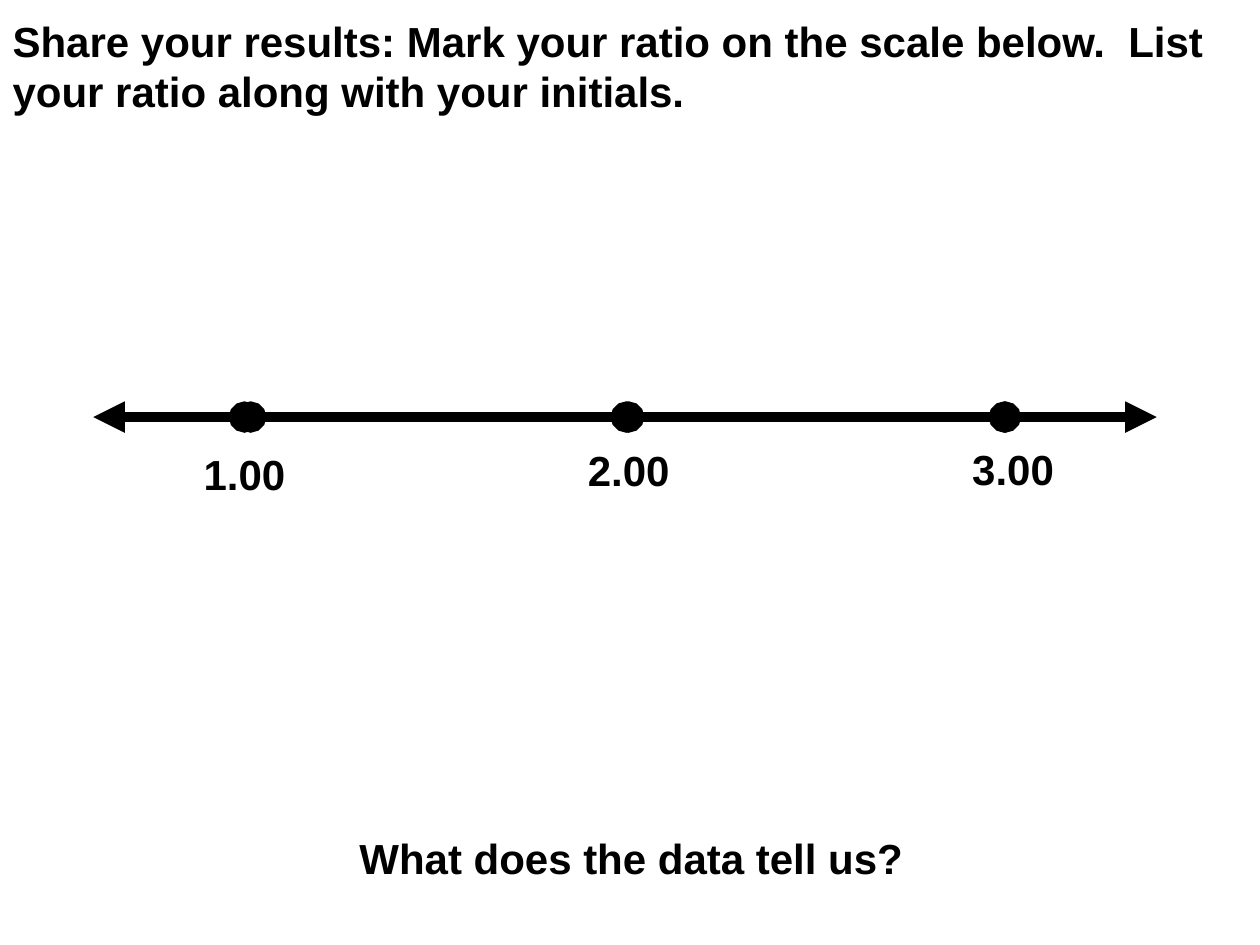
from dataclasses import dataclass

from lxml.etree import SubElement
from pptx import Presentation
from pptx.dml.color import RGBColor
from pptx.enum.shapes import MSO_CONNECTOR
from pptx.enum.text import MSO_ANCHOR, MSO_AUTO_SIZE, PP_ALIGN
from pptx.oxml.ns import qn
from pptx.util import Pt


@dataclass(frozen=True)
class Theme:
    ink: RGBColor = RGBColor(0, 0, 0)
    paper: RGBColor = RGBColor(255, 255, 255)
    font: str = "Arial"
    size: float = 24
    stroke: float = 6


THEME = Theme()


def write(shape, text, align):
    frame = shape.text_frame
    frame.word_wrap = True
    frame.auto_size = MSO_AUTO_SIZE.NONE
    frame.vertical_anchor = MSO_ANCHOR.TOP
    frame.text = text
    para = frame.paragraphs[0]
    para.alignment = align
    para.space_before = Pt(THEME.size / 2)
    font = para.font
    font.name, font.size, font.bold = THEME.font, Pt(THEME.size), True
    font.color.rgb = THEME.ink


def add_title(slide, box, text):
    title = slide.shapes.title
    title.left, title.top, title.width, title.height = map(Pt, box)
    write(title, text, PP_ALIGN.LEFT)


def add_label(slide, box, text):
    write(slide.shapes.add_textbox(*map(Pt, box)), text, PP_ALIGN.CENTER)


def add_line(group, start, stop, y, tail):
    """Draw a line with a dot at its start and the given tail at its stop."""
    line = group.shapes.add_connector(
        MSO_CONNECTOR.STRAIGHT, Pt(start), Pt(y), Pt(stop), Pt(y))
    line.line.width = Pt(THEME.stroke)
    line.line.color.rgb = THEME.ink
    props = line.line._get_or_add_ln()
    SubElement(props, qn("a:headEnd"), type="oval")
    SubElement(props, qn("a:tailEnd"), type=tail)
    SubElement(line._element.spPr, qn("a:effectLst"))


def add_scale(slide, box):
    """Draw the number line along the top of the box, with labels below."""
    left, top, width, height = box
    arm, step = 86.4, 216
    first, last = left + arm, left + width - arm
    group = slide.shapes.add_group_shape()
    add_line(group, first + 3.6, first + 3.6 + step, top, "oval")
    add_line(group, last - 0.7 - step, last - 0.7, top, "oval")
    add_line(group, last, left + width, top, "triangle")
    add_line(group, first, left, top, "triangle")

    wide, high, pitch = 77.76, 36.72, 219.6
    for i, drop in enumerate((14.4, 12.24, 11.52)):
        spot = (first + i * pitch - wide / 2, top + drop, wide, high)
        add_label(slide, spot, f"{i + 1:.2f}")


def main():
    deck = Presentation()
    deck.slide_width, deck.slide_height = Pt(720), Pt(540)
    slide = deck.slides.add_slide(deck.slide_layouts[5])
    fill = slide.background.fill
    fill.solid()
    fill.fore_color.rgb = THEME.paper
    add_title(slide, (0, 5.04, 708.48, 65.52),
              "Share your results: Mark your ratio on the scale below.  "
              "List your ratio along with your initials.")
    add_label(slide, (6.48, 472.32, 708.48, 36.72),
              "What does the data tell us?")
    add_scale(slide, (53.28, 238.32, 607.68, 50.4))
    deck.save("out.pptx")


if __name__ == "__main__":
    main()
